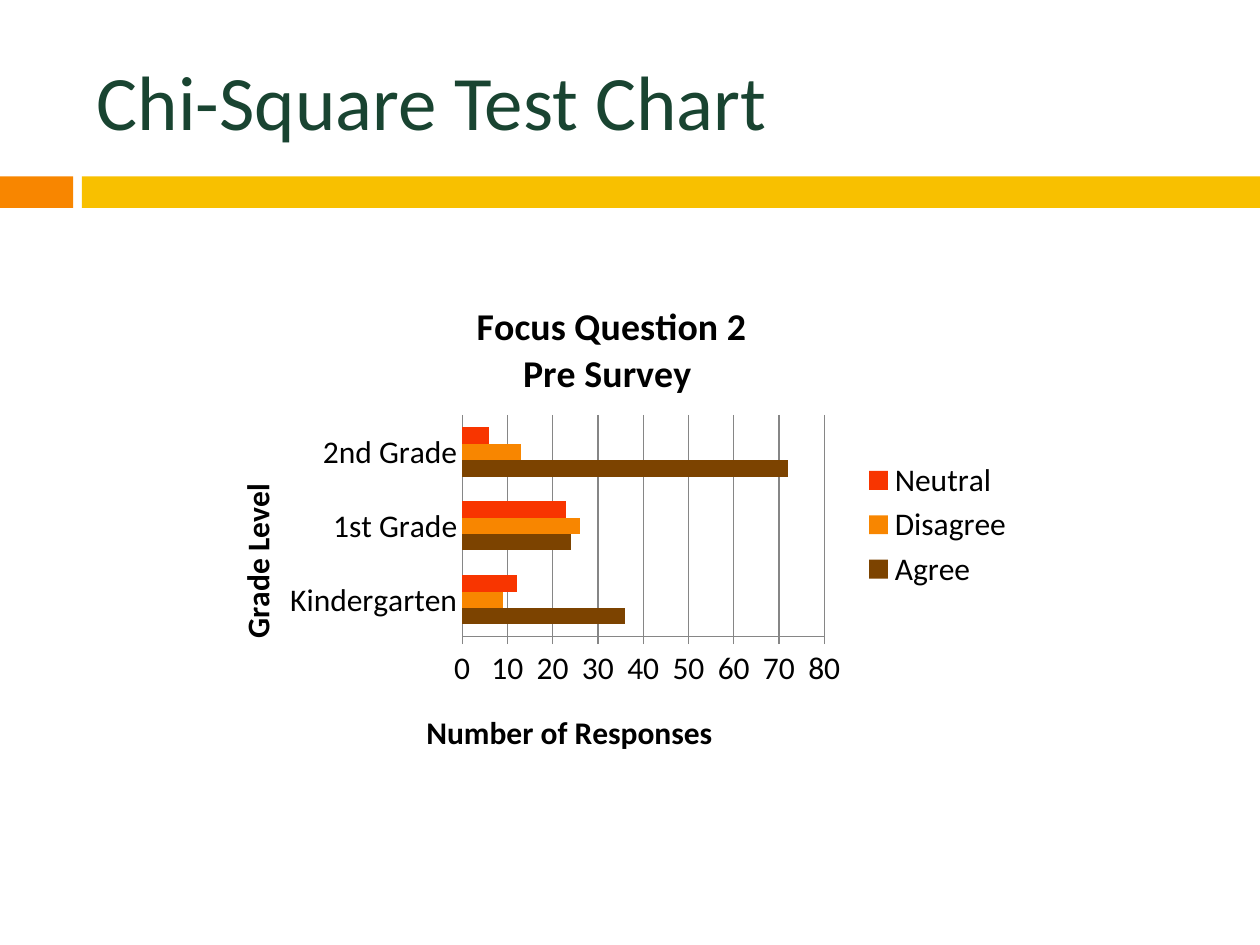
from dataclasses import dataclass

from lxml import etree
from pptx import Presentation
from pptx.chart.data import CategoryChartData
from pptx.dml.color import RGBColor
from pptx.enum.chart import XL_CHART_TYPE, XL_LEGEND_POSITION, XL_TICK_MARK
from pptx.enum.shapes import MSO_SHAPE
from pptx.enum.text import MSO_ANCHOR
from pptx.oxml.ns import qn
from pptx.util import Inches, Pt

RECTANGLE = MSO_SHAPE.RECTANGLE
MIDDLE = MSO_ANCHOR.MIDDLE
BAR_CLUSTERED = XL_CHART_TYPE.BAR_CLUSTERED
LEGEND_RIGHT = XL_LEGEND_POSITION.RIGHT
TICK_NONE, TICK_OUTSIDE = XL_TICK_MARK.NONE, XL_TICK_MARK.OUTSIDE


@dataclass(frozen=True)
class Theme:
    font: str = "Calibri"
    heading: str = "194431"
    text: str = "000000"
    amber: str = "F88600"
    yellow: str = "F8C000"
    brown: str = "7C4300"
    red: str = "F83500"
    grid: str = "868686"
    heading_size: float = 44
    chart_title_size: float = 21.6
    chart_size: float = 18


THEME = Theme()
SLIDE_WIDTH, SLIDE_HEIGHT = 10, 7.5
GRADES = ["Kindergarten", "1st Grade", "2nd Grade"]
RESPONSES = [
    ("Agree", [36, 24, 72], THEME.brown),
    ("Disagree", [9, 26, 13], THEME.amber),
    ("Neutral", [12, 23, 6], THEME.red),
]


def style_font(font, size, color=THEME.text, bold=False):
    font.name = THEME.font
    font.size = Pt(size)
    font.bold = bold
    font.color.rgb = RGBColor.from_string(color)


def write_text(text_frame, text, **style):
    """Put one paragraph per line of text, all in the same format."""
    for index, line in enumerate(text.split("\n")):
        paragraph = text_frame.paragraphs[0] if index == 0 else text_frame.add_paragraph()
        run = paragraph.add_run()
        run.text = line
        style_font(run.font, **style)


def add_heading(slide, box, text):
    heading = slide.shapes.add_textbox(*map(Inches, box)).text_frame
    heading.word_wrap = True
    heading.vertical_anchor = MIDDLE
    write_text(heading, text, size=THEME.heading_size, color=THEME.heading)


def add_divider(slide, box, accent_width=0.58, gap=0.07):
    """Draw a short accent block, a gap and a band filling the rest of the box."""
    left, top, width, height = box
    band_offset = accent_width + gap
    for offset, part_width, color in (
        (0, accent_width, THEME.amber),
        (band_offset, width - band_offset, THEME.yellow),
    ):
        part = slide.shapes.add_shape(
            RECTANGLE, *map(Inches, (left + offset, top, part_width, height)))
        part.shadow.inherit = False
        part.fill.solid()
        part.fill.fore_color.rgb = RGBColor.from_string(color)
        part.line.fill.background()


def set_layout(element, index, inner=False, **shares):
    """Place a chart part at shares (x, y, w, h) of the chart's size."""
    for old_layout in element.findall(qn("c:layout")):
        element.remove(old_layout)
    layout = etree.Element(qn("c:layout"))
    manual = etree.SubElement(layout, qn("c:manualLayout"))
    settings = [("layoutTarget", "inner")] if inner else []
    settings += [("xMode", "edge"), ("yMode", "edge"), *shares.items()]
    for tag, value in settings:
        etree.SubElement(manual, qn(f"c:{tag}")).set("val", str(value))
    element.insert(index, layout)


def style_axis(axis, title, tick, x, y):
    axis.major_tick_mark = tick
    axis.minor_tick_mark = TICK_NONE
    axis.format.line.color.rgb = RGBColor.from_string(THEME.grid)
    style_font(axis.tick_labels.font, THEME.chart_size)
    write_text(axis.axis_title.text_frame, title, size=THEME.chart_size, bold=True)
    set_layout(axis.axis_title._element, 1, x=x, y=y)


def add_survey_chart(slide, box):
    data = CategoryChartData()
    data.categories = GRADES
    for answer, counts, _ in RESPONSES:
        data.add_series(answer, counts)
    chart = slide.shapes.add_chart(BAR_CLUSTERED, *map(Inches, box), data).chart
    style_font(chart.font, THEME.chart_size)

    chart.has_title = True
    write_text(chart.chart_title.text_frame, "Focus Question 2\nPre Survey ",
               size=THEME.chart_title_size, bold=True)
    chart.chart_title.include_in_layout = False

    chart.has_legend = True
    chart.legend.position = LEGEND_RIGHT
    chart.legend.include_in_layout = False
    style_font(chart.legend.font, THEME.chart_size)

    grades, counts_axis = chart.category_axis, chart.value_axis
    style_axis(grades, "Grade Level ", TICK_NONE, x=0.04, y=0.39)
    grade_body = grades.axis_title._element.find(".//" + qn("a:bodyPr"))
    grade_body.set("rot", "-5400000")
    grade_body.set("vert", "horz")
    style_axis(counts_axis, "Number of Responses ", TICK_OUTSIDE, x=0.27, y=0.87)
    counts_axis.minimum_scale, counts_axis.maximum_scale = 0, 80
    counts_axis.major_unit = 10
    counts_axis.has_major_gridlines = True
    counts_axis.major_gridlines.format.line.color.rgb = RGBColor.from_string(THEME.grid)

    plot = chart.plots[0]
    plot.gap_width = 150
    plot.vary_by_categories = False
    for series, (_, _, color) in zip(plot.series, RESPONSES):
        series.format.fill.solid()
        series.format.fill.fore_color.rgb = RGBColor.from_string(color)
    plot_area = chart._chartSpace.find(".//" + qn("c:plotArea"))
    set_layout(plot_area, 0, inner=True, x=0.32, y=0.275, w=0.436, h=0.455)


def main():
    presentation = Presentation()
    presentation.slide_width = Inches(SLIDE_WIDTH)
    presentation.slide_height = Inches(SLIDE_HEIGHT)
    slide = presentation.slides.add_slide(presentation.slide_layouts[6])
    add_divider(slide, (0, 1.4, SLIDE_WIDTH, 0.25))
    add_heading(slide, (0.67, 0.25, 8.92, 1.08), "Chi-Square Test Chart")
    add_survey_chart(slide, (1.56, 2.23, 6.59, 3.87))
    presentation.save("out.pptx")


if __name__ == "__main__":
    main()
